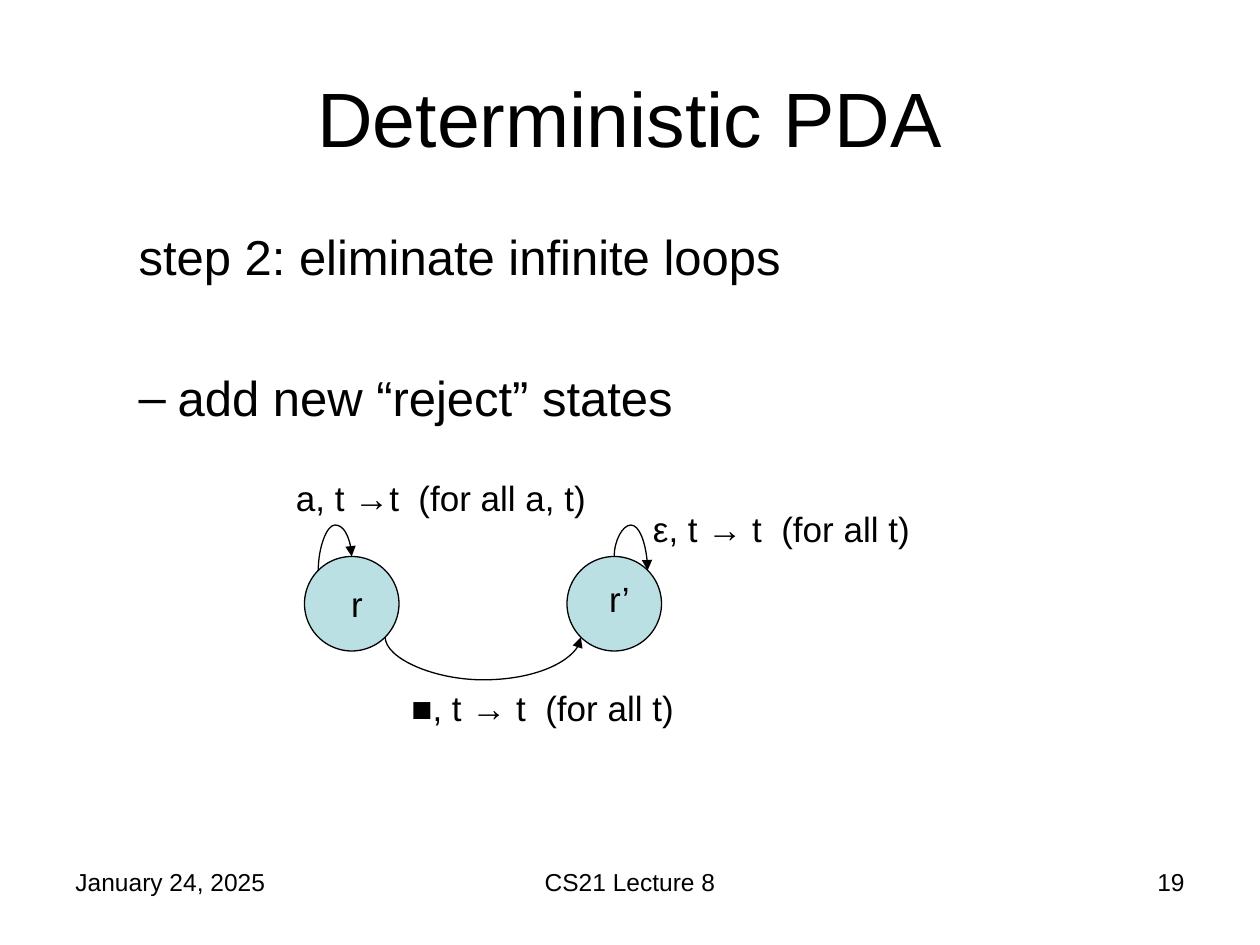
import math

from lxml import etree
from pptx import Presentation, util as u
from pptx.dml.color import RGBColor
from pptx.enum import shapes, text
from pptx.oxml.ns import qn

BLACK, STATE_FILL = "000000", "BBE0E3"
LEFT, CENTER, RIGHT = text.PP_ALIGN.LEFT, text.PP_ALIGN.CENTER, text.PP_ALIGN.RIGHT
MIDDLE, TOP = text.MSO_ANCHOR.MIDDLE, text.MSO_ANCHOR.TOP


def rgb(color):
    return RGBColor.from_string(color)


def grid(n):
    """Length of n cells; the slide has 120 columns and 90 rows."""
    return u.Emu(round(n * u.Inches(1) / 12))


class Deck:
    font = "Arial"
    line_width = u.Pt(0.75)

    def __init__(self):
        self.prs = Presentation()
        self.prs.slide_width, self.prs.slide_height = grid(120), grid(90)
        self.slide = self.prs.slides.add_slide(self.prs.slide_layouts[1])

    def place(self, sp, x, y, w, h):
        sp.left, sp.top, sp.width, sp.height = map(grid, (x, y, w, h))

    def frame(self, sp, anchor=TOP):
        tf = sp.text_frame
        tf.word_wrap = True
        tf.auto_size = text.MSO_AUTO_SIZE.NONE
        tf.vertical_anchor = anchor
        return tf

    def add_words(self, p, words, size, align=LEFT):
        p.alignment = align
        r = p.add_run()
        r.text = words
        r.font.name, r.font.size = self.font, u.Pt(size)
        r.font.color.rgb = rgb(BLACK)

    def title(self, words, *box):
        sp = self.slide.shapes.title
        self.place(sp, *box)
        self.add_words(self.frame(sp, MIDDLE).paragraphs[0], words, 44, CENTER)

    def body(self, items, *box):
        """Fill the body with (words, bullet or None, space before)."""
        sp = self.slide.placeholders[1]
        self.place(sp, *box)
        tf = self.frame(sp)
        for i, (words, bullet, before) in enumerate(items):
            p = tf.add_paragraph() if i else tf.paragraphs[0]
            p.level = 1
            p.space_before = u.Pt(before)
            self.add_words(p, words, 28)
            pPr = p._p.get_or_add_pPr()
            pPr.set("marL", str(u.Inches(0.81)))
            pPr.set("indent", str(u.Inches(-0.31)))
            if bullet:
                etree.SubElement(pPr, qn("a:buFont"), typeface=self.font)
                etree.SubElement(pPr, qn("a:buChar"), char=bullet)
            else:
                etree.SubElement(pPr, qn("a:buNone"))

    def label(self, words, x, y, w, h=5.2, size=20, align=LEFT):
        sp = self.slide.shapes.add_textbox(*map(grid, (x, y, w, h)))
        self.add_words(self.frame(sp).paragraphs[0], words, size, align)

    def state(self, cx, cy, radius):
        box = map(grid, (cx - radius, cy - radius, 2 * radius, 2 * radius))
        sp = self.slide.shapes.add_shape(shapes.MSO_SHAPE.OVAL, *box)
        sp.shadow.inherit = False
        sp.fill.solid()
        sp.fill.fore_color.rgb = rgb(STATE_FILL)
        sp.line.color.rgb = rgb(BLACK)
        sp.line.width = self.line_width

    def transition(self, start, end, peak):
        """Curved arrow, left to right, that swings out to the row peak."""
        (x1, y1), (x2, y2) = start, end
        rise, run = max(abs(y2 - y1), 0.02), x2 - x1
        cx, cy = (x1 + x2) / 2, (y1 + y2) / 2
        upward = y2 < y1
        corners = (cx - rise / 2, cy - run / 2, cx + rise / 2, cy + run / 2)
        sp = self.slide.shapes.add_connector(
            shapes.MSO_CONNECTOR.CURVE, *map(grid, corners))
        sp.line.color.rgb = rgb(BLACK)
        sp.line.width = self.line_width
        spPr = sp._element.spPr
        etree.SubElement(spPr.get_or_add_ln(), qn("a:tailEnd"), type="triangle")
        etree.SubElement(spPr, qn("a:effectLst"))
        xfrm = spPr.find(qn("a:xfrm"))
        xfrm.set("rot", str((270 if upward else 90) * 60000))
        if not upward:
            xfrm.set("flipV", "1")
        bend = (y1 - peak if upward else peak - y1) / rise
        guides = spPr.find(qn("a:prstGeom")).get_or_add_avLst()
        etree.SubElement(guides, qn("a:gd"), name="adj1",
                         fmla=f"val {round(bend * 100000)}")


def main():
    deck = Deck()
    deck.title("Deterministic PDA", 6, 3.6, 108, 15)
    deck.body([("step 2: eliminate infinite loops", None, 5.6),
               ("add new “reject” states", "–", 47)], 6, 21, 108, 21)

    for words, x, w, align in (("January 24, 2025", 6, 28, LEFT),
                               ("CS21 Lecture 8", 41, 38, CENTER),
                               ("19", 86, 28, RIGHT)):
        deck.label(words, x, 82, w, 6.25, 14, align)

    radius, row, left, right = 4.5, 57.5, 33.5, 58.5
    diag = radius * math.sqrt(0.5)
    for cx in (left, right):
        deck.state(cx, row, radius)
    deck.label("r’", 56, 54.4, 6, align=CENTER)
    deck.label("r", 31, 54.9, 6, align=CENTER)

    top = row - radius
    deck.transition((left - diag, row - diag), (left, top), 50)
    deck.transition((right, top), (right + diag, row - diag), 50)
    deck.transition((left + diag, row + diag), (right - diag, row + diag), 65)

    for words, x, y in (("a, t →t  (for all a, t)", 27, 44.75),
                        ("ε, t → t  (for all t)", 61, 47.75),
                        ("■, t → t  (for all t)", 38, 64.75)):
        deck.label(words, x, y, 39)
    deck.prs.save("out.pptx")


if __name__ == "__main__":
    main()
